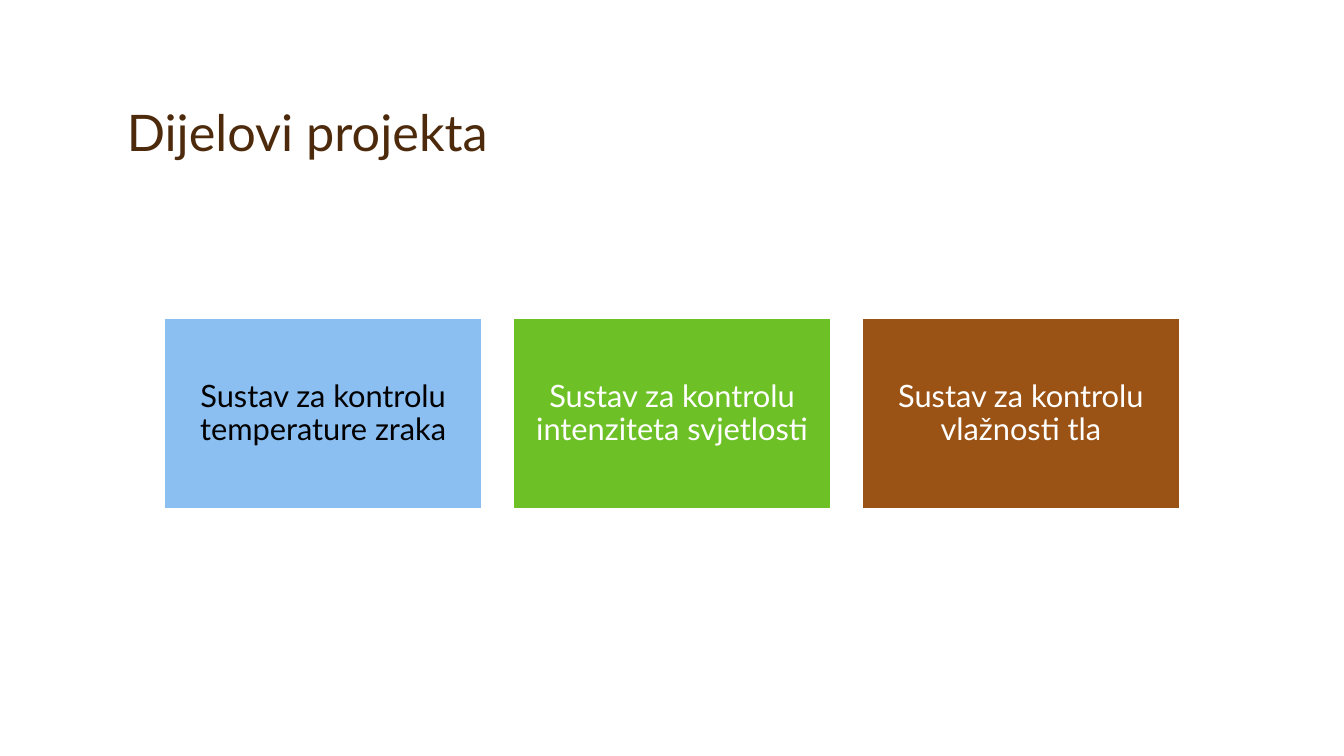
from dataclasses import dataclass

from pptx import Presentation
from pptx.dml.color import RGBColor
from pptx.enum.shapes import MSO_SHAPE as Preset
from pptx.enum.text import MSO_ANCHOR as Anchor, PP_ALIGN as Align
from pptx.shapes.base import BaseShape
from pptx.slide import Slide
from pptx.util import Inches, Pt

COLOURS = {
    "title": "4D2A0B",
    "air": "8BBEF1",
    "light": "6DC025",
    "soil": "9A5315",
    "black": "010000",
    "white": "FFFFFF",
}
FONT = "Lato"

CARD_LEFT, CARD_TOP = 1.63, 3.16
CARD_WIDTH, CARD_HEIGHT = 3.15, 1.89
CARD_STEP = 3.46
CARD_INSET = 0.09


@dataclass
class Card:
    text: str
    fill: str
    ink: str


CARDS = [
    Card("Sustav za kontrolu temperature zraka", "air", "black"),
    Card("Sustav za kontrolu intenziteta svjetlosti", "light", "white"),
    Card("Sustav za kontrolu vlažnosti tla", "soil", "white"),
]


def colour(name: str) -> RGBColor:
    return RGBColor.from_string(COLOURS[name])


def apply(target: object, values: dict) -> None:
    for name, value in values.items():
        setattr(target, name, value)


def write(box: BaseShape, text: str, size: int, ink: str,
          frame_format: dict, para_format: dict) -> None:
    frame = box.text_frame
    apply(frame, {"word_wrap": True, **frame_format})
    para = frame.paragraphs[0]
    apply(para, {"line_spacing": 0.9, **para_format})
    span = para.add_run()
    span.text = text
    apply(span.font, {"name": FONT, "size": Pt(size)})
    span.font.color.rgb = colour(ink)


def add_title(page: Slide, text: str) -> None:
    box = page.shapes.add_textbox(Inches(1.16), Inches(0.33), Inches(11), Inches(1.33))
    write(box, text, 36, "title",
          {"vertical_anchor": Anchor.BOTTOM}, {"alignment": Align.LEFT})


def add_card(page: Slide, card: Card, column: int) -> None:
    box = page.shapes.add_shape(
        Preset.RECTANGLE,
        Inches(CARD_LEFT + column * CARD_STEP), Inches(CARD_TOP),
        Inches(CARD_WIDTH), Inches(CARD_HEIGHT))
    box.shadow.inherit = False
    box.fill.solid()
    box.fill.fore_color.rgb = colour(card.fill)
    box.line.color.rgb = colour("white")
    box.line.width = Pt(1)
    margins = {f"margin_{side}": Inches(CARD_INSET)
               for side in ("left", "top", "right", "bottom")}
    write(box, card.text, 22, card.ink,
          {"vertical_anchor": Anchor.MIDDLE, **margins},
          {"alignment": Align.CENTER, "space_after": Pt(7.7)})


def main() -> None:
    deck = Presentation()
    apply(deck, {"slide_width": Inches(13.33), "slide_height": Inches(7.5)})
    page = deck.slides.add_slide(deck.slide_layouts[6])

    # Heading
    add_title(page, "Dijelovi projekta")

    # Row of project parts
    for column, card in enumerate(CARDS):
        add_card(page, card, column)

    deck.save("out.pptx")


if __name__ == "__main__":
    main()
